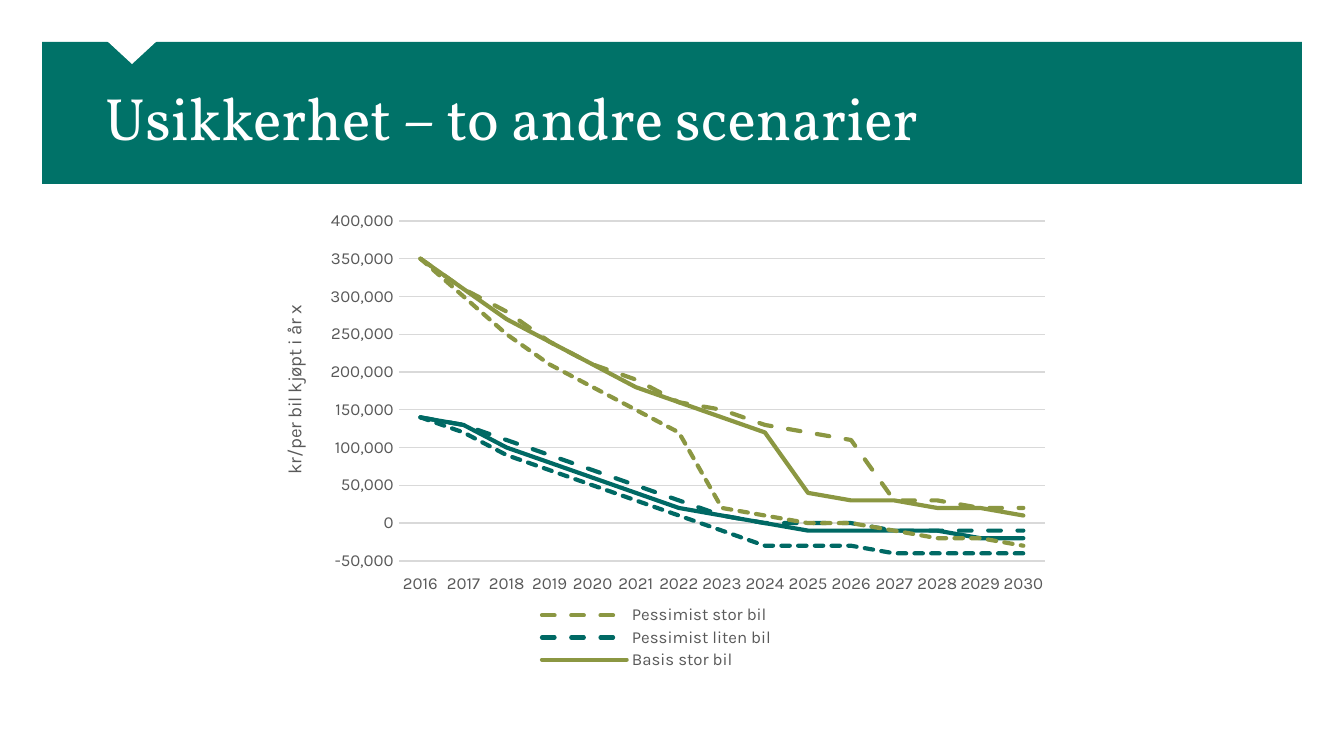
from dataclasses import dataclass

from pptx import Presentation
from pptx.chart.data import CategoryChartData
from pptx.dml.color import RGBColor
from pptx.enum.chart import XL_CHART_TYPE as ChartType
from pptx.enum.chart import XL_LEGEND_POSITION as LegendPosition
from pptx.enum.chart import XL_TICK_LABEL_POSITION as LabelPosition
from pptx.enum.chart import XL_TICK_MARK as TickMark
from pptx.enum.dml import MSO_LINE as Dash
from pptx.enum.shapes import MSO_SHAPE as Shape
from pptx.enum.text import MSO_ANCHOR as Anchor
from pptx.oxml import parse_xml
from pptx.oxml.ns import nsdecls, qn
from pptx.util import Emu, Pt


@dataclass(frozen=True)
class Theme:
    band: str = "007268"
    white: str = "FFFFFF"
    large_car: str = "8B9742"
    small_car: str = "006964"
    label: str = "595959"
    grid: str = "D9D9D9"
    title_font: str = "Vollkorn"
    body_font: str = "Karla"
    title_size: int = 32
    axis_title_size: int = 10
    label_size: int = 9
    series_width: float = 2.25
    grid_width: float = 0.75


THEME = Theme()
EMU_PER_PX = 914400 / 134.4
CHART_WIDTH, CHART_HEIGHT = 797, 485
YEARS = range(2016, 2031)
VALUE_UNIT = 10000
SHOWN_IN_LEGEND = 3
SCENARIOS = [
    ("Pessimist", Dash.DASH,
     [35, 31, 28, 24, 21, 19, 16, 15, 13, 12, 11, 3, 3, 2, 2],
     [14, 13, 11, 9, 7, 5, 3, 1, 0, 0, 0, -1, -1, -1, -1]),
    ("Basis", Dash.SOLID,
     [35, 31, 27, 24, 21, 18, 16, 14, 12, 4, 3, 3, 2, 2, 1],
     [14, 13, 10, 8, 6, 4, 2, 1, 0, -1, -1, -1, -1, -2, -2]),
    ("Optimist", Dash.SQUARE_DOT,
     [35, 30, 25, 21, 18, 15, 12, 2, 1, 0, 0, -1, -2, -2, -3],
     [14, 12, 9, 7, 5, 3, 1, -1, -3, -3, -3, -4, -4, -4, -4]),
]


def px(value):
    return Emu(round(value * EMU_PER_PX))


def box(*lengths):
    return [px(length) for length in lengths]


def color(value):
    return RGBColor.from_string(value)


def set_font(font, name, size, value):
    font.name = name
    font.size = Pt(size)
    font.bold = False
    font.color.rgb = color(value)


def set_line(line, value, width):
    line.color.rgb = color(value)
    line.width = Pt(width)


def add_block(slide, kind, fill, *bounds):
    shape = slide.shapes.add_shape(kind, *box(*bounds))
    shape.shadow.inherit = False
    shape.fill.solid()
    shape.fill.fore_color.rgb = color(fill)
    shape.line.fill.background()
    return shape


def add_title(slide, text, *bounds):
    frame = slide.shapes.add_textbox(*box(*bounds)).text_frame
    frame.word_wrap = True
    frame.vertical_anchor = Anchor.MIDDLE
    frame.margin_left = frame.margin_right = 0
    frame.margin_top = frame.margin_bottom = 0
    paragraph = frame.paragraphs[0]
    paragraph.text = text
    set_font(paragraph.font, THEME.title_font, THEME.title_size, THEME.white)


def set_layout(parent, index, target=None, **lengths):
    existing = parent.find(qn("c:layout"))
    if existing is not None:
        parent.remove(existing)
    inner = f'<c:layoutTarget val="{target}"/>' if target else ""
    modes = "".join(f'<c:{key}Mode val="edge"/>' for key in ("x", "y"))
    values = "".join(
        f'<c:{key} val="{length / (CHART_WIDTH if key in "xw" else CHART_HEIGHT)}"/>'
        for key, length in lengths.items())
    parent.insert(index, parse_xml(
        f'<c:layout {nsdecls("c")}><c:manualLayout>{inner}{modes}{values}'
        "</c:manualLayout></c:layout>"))


def style_axis(axis):
    axis.major_tick_mark = axis.minor_tick_mark = TickMark.NONE
    set_font(axis.tick_labels.font, THEME.body_font, THEME.label_size, THEME.label)


def style_category_axis(axis):
    style_axis(axis)
    axis.tick_label_position = LabelPosition.LOW
    set_line(axis.format.line, THEME.grid, THEME.grid_width)


def style_value_axis(axis, title):
    style_axis(axis)
    axis.minimum_scale, axis.maximum_scale = -50000, 400000
    axis.major_unit = 50000
    axis.tick_labels.number_format = "#,##0"
    axis.tick_labels.number_format_is_linked = False
    axis.format.line.fill.background()
    axis.has_major_gridlines = True
    set_line(axis.major_gridlines.format.line, THEME.grid, THEME.grid_width)
    frame = axis.axis_title.text_frame
    frame.text = title
    set_font(frame.paragraphs[0].font, THEME.body_font,
             THEME.axis_title_size, THEME.label)
    body = frame._txBody.find(qn("a:bodyPr"))
    body.set("rot", "-5400000")
    body.set("vert", "horz")
    set_layout(axis.axis_title._element, 1, x=21, y=102)


def style_legend(chart, series_count):
    chart.has_legend = True
    legend = chart.legend
    legend.position = LegendPosition.BOTTOM
    legend.include_in_layout = False
    set_font(legend.font, THEME.body_font, THEME.label_size, THEME.label)
    set_layout(legend._element, 1, x=275, y=403, w=247, h=69)
    for index in reversed(range(SHOWN_IN_LEGEND, series_count)):
        legend._element.insert(1, parse_xml(
            f'<c:legendEntry {nsdecls("c")}><c:idx val="{index}"/>'
            '<c:delete val="1"/></c:legendEntry>'))


def style_series(series, value, dash):
    series.smooth = False
    set_line(series.format.line, value, THEME.series_width)
    series.format.line.dash_style = dash
    series.format.line._ln.set("cap", "rnd")


def add_cost_chart(slide, left, top):
    data = CategoryChartData(number_format="#,##0")
    data.categories = [str(year) for year in YEARS]
    styles = []
    for scenario, dash, large, small in SCENARIOS:
        for car, value, costs in (("stor", THEME.large_car, large),
                                  ("liten", THEME.small_car, small)):
            data.add_series(f"{scenario} {car} bil",
                            [cost * VALUE_UNIT for cost in costs])
            styles.append((value, dash))
    bounds = box(left, top, CHART_WIDTH, CHART_HEIGHT)
    chart = slide.shapes.add_chart(ChartType.LINE, *bounds, data).chart
    chart.has_title = False
    chart.font.name = THEME.body_font
    chart.font.size = Pt(THEME.axis_title_size)
    chart.plots[0].vary_by_categories = False
    for series, style in zip(chart.plots[0].series, styles):
        style_series(series, *style)
    style_category_axis(chart.category_axis)
    style_value_axis(chart.value_axis, "kr/per bil kjøpt i år x")
    style_legend(chart, len(styles))
    set_layout(chart._chartSpace.chart.plotArea, 0, "inner",
               x=141, y=21, w=646, h=340)


def main():
    presentation = Presentation()
    presentation.slide_width, presentation.slide_height = box(1344, 756)
    slide = presentation.slides.add_slide(presentation.slide_layouts[6])
    add_block(slide, Shape.RECTANGLE, THEME.band, 42, 42, 1260, 142)
    notch = add_block(slide, Shape.ISOSCELES_TRIANGLE, THEME.white, 105, 39, 54, 25)
    notch.rotation = 180
    add_title(slide, "Usikkerhet – to andre scenarier", 105, 80, 1138, 73)
    add_cost_chart(slide, 258, 200)
    presentation.save("out.pptx")


if __name__ == "__main__":
    main()
